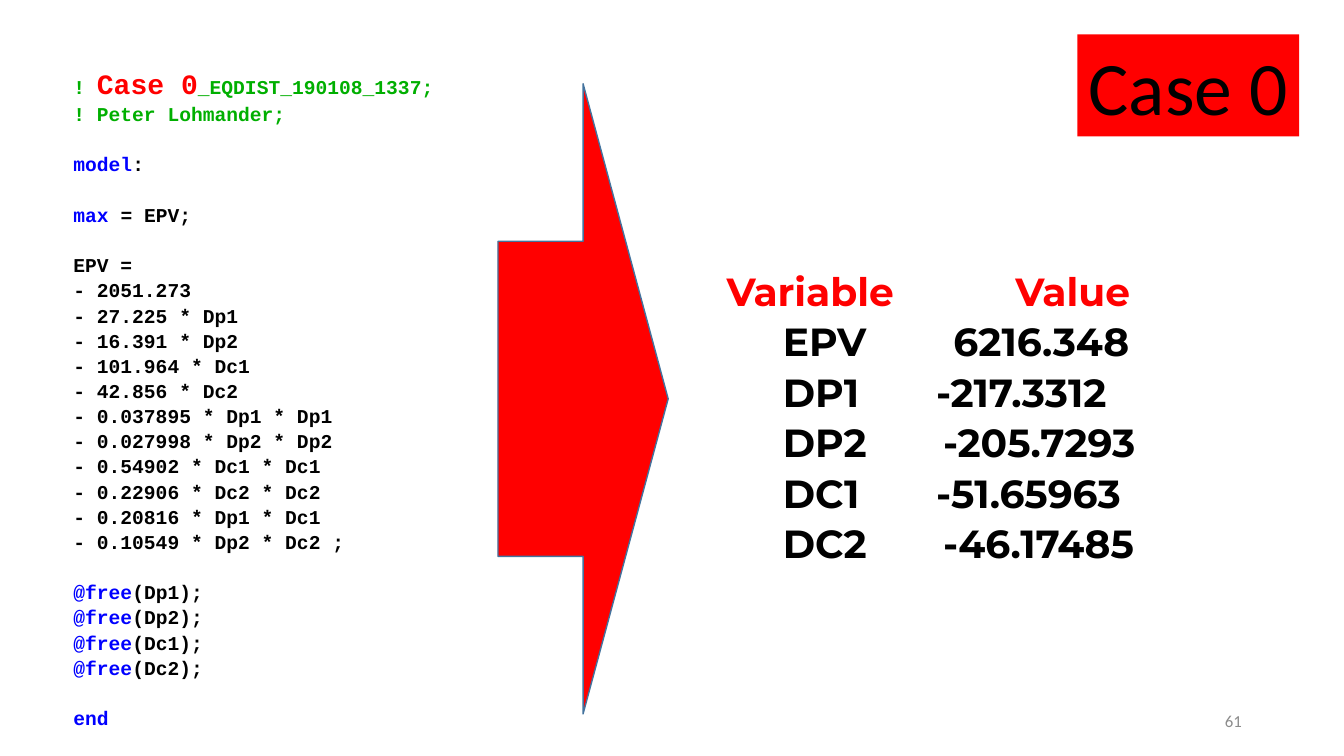
import pptx
import pptx.dml.color
import pptx.enum.shapes
import pptx.enum.text
import pptx.oxml.ns
import pptx.util
from lxml import etree

Cm = pptx.util.Cm
Pt = pptx.util.Pt
RGBColor = pptx.dml.color.RGBColor
Align = pptx.enum.text.PP_ALIGN
Shape = pptx.enum.shapes.MSO_SHAPE

BLACK = RGBColor(0, 0, 0)
RED = RGBColor(255, 0, 0)
GREEN = RGBColor(0, 0xAF, 0)
BLUE = RGBColor(0, 0, 255)
STEEL = RGBColor(0x43, 0x73, 0x9E)
GREY = RGBColor(0x8C, 0x8C, 0x8C)
LINE_SPACING = 1.07

CODE_BLOCKS = [
    [[("! ", GREEN), ("Case 0", RED), ("_EQDIST_190108_1337;", GREEN)],
     [("! Peter Lohmander;", GREEN)]],
    [[("model", BLUE), (":", BLACK)]],
    [[("max", BLUE), (" = EPV;", BLACK)]],
    [[(line, BLACK)] for line in (
        "EPV =", "- 2051.273", "- 27.225 * Dp1", "- 16.391 * Dp2",
        "- 101.964 * Dc1", "- 42.856 * Dc2", "- 0.037895 * Dp1 * Dp1",
        "- 0.027998 * Dp2 * Dp2", "- 0.54902 * Dc1 * Dc1",
        "- 0.22906 * Dc2 * Dc2", "- 0.20816 * Dp1 * Dc1",
        "- 0.10549 * Dp2 * Dc2 ;")],
    [[("@free", BLUE), (f"({name});", BLACK)]
     for name in ("Dp1", "Dp2", "Dc1", "Dc2")],
    [[("end", BLUE)]],
]

NAME_TAB = 1.42
RESULTS = [
    ("Variable", "Value", 7.28),
    ("\tEPV", "6216.348", 5.72),
    ("\tDP1", "-217.3312", 5.28),
    ("\tDP2", "-205.7293", 5.46),
    ("\tDC1", "-51.65963", 5.28),
    ("\tDC2", "-46.17485", 5.46),
]


def set_font(font, name, size, color=None, bold=False):
    """Apply a typeface, size, weight and optional colour."""
    font.name = name
    font.size = Pt(size)
    font.bold = bold
    if color is not None:
        font.color.rgb = color


def add_text_box(slide, left, top, width, height):
    """Add a wrapping text box and return its text frame."""
    box = slide.shapes.add_textbox(Cm(left), Cm(top), Cm(width), Cm(height))
    box.text_frame.word_wrap = True
    return box.text_frame


def next_paragraph(frame, index):
    """Return the first paragraph of a frame or append another."""
    return frame.add_paragraph() if index else frame.paragraphs[0]


def add_tab_stops(para, positions):
    """Give a paragraph left tab stops at distances in centimetres."""
    tabs = etree.SubElement(para._p.get_or_add_pPr(), pptx.oxml.ns.qn("a:tabLst"))
    for position in positions:
        etree.SubElement(tabs, pptx.oxml.ns.qn("a:tab"),
                         pos=str(Cm(position)), algn="l")


def add_code(slide, left, top, width, height):
    """Write the model code, with a gap before each block."""
    frame = add_text_box(slide, left, top, width, height)
    lines = [(line, index == 0) for block in CODE_BLOCKS
             for index, line in enumerate(block)]
    for index, (line, starts_block) in enumerate(lines):
        para = next_paragraph(frame, index)
        para.line_spacing = LINE_SPACING
        if starts_block and index:
            para.space_before = Pt(18)
        set_font(para.font, "Courier New", 14, bold=True)
        for text, color in line:
            span = para.add_run()
            span.text = text
            span.font.color.rgb = color
            if color == RED:
                span.font.size = Pt(20)


def add_results(slide, left, top, width, height):
    """Write the variables and their values on tab stops."""
    frame = add_text_box(slide, left, top, width, height)
    for index, (name, value, value_tab) in enumerate(RESULTS):
        para = next_paragraph(frame, index)
        add_tab_stops(para, (NAME_TAB, value_tab))
        para.line_spacing = LINE_SPACING
        para.add_run().text = f"{name}\t{value}"
        set_font(para.font, "Montserrat", 28, BLACK if index else RED, True)


def add_red_shape(slide, kind, left, top, width, height):
    """Add a flat red shape without an outline."""
    shape = slide.shapes.add_shape(kind, Cm(left), Cm(top), Cm(width), Cm(height))
    shape.shadow.inherit = False
    shape.fill.solid()
    shape.fill.fore_color.rgb = RED
    shape.line.fill.background()
    return shape


def add_arrow(slide, left, top, width, height):
    """Draw the outlined arrow from code to results."""
    arrow = add_red_shape(slide, Shape.RIGHT_ARROW, left, top, width, height)
    arrow.line.color.rgb = STEEL
    arrow.line.width = Pt(1)


def add_case_label(slide, left, top, width, height):
    """Draw the red case label."""
    label = add_red_shape(slide, Shape.RECTANGLE, left, top, width, height)
    label.text_frame.word_wrap = False
    label.text_frame.vertical_anchor = pptx.enum.text.MSO_ANCHOR.TOP
    para = label.text_frame.paragraphs[0]
    para.text = "Case 0"
    para.alignment = Align.CENTER
    set_font(para.font, "Calibri", 54, BLACK)


def add_page_number(slide, left, top, width, height):
    """Write the page number at the right of its box."""
    frame = add_text_box(slide, left, top, width, height)
    frame.vertical_anchor = pptx.enum.text.MSO_ANCHOR.MIDDLE
    para = frame.paragraphs[0]
    para.text = "61"
    para.alignment = Align.RIGHT
    set_font(para.font, "Calibri", 12, GREY)


def main():
    """Build and save the deck."""
    deck = pptx.Presentation()
    deck.slide_width = Cm(33.87)
    deck.slide_height = Cm(19.05)
    slide = deck.slides.add_slide(deck.slide_layouts[6])
    add_code(slide, 1.6, 1.5, 10.44, 17.2)
    add_results(slide, 18.06, 6.53, 15.32, 7.95)
    add_arrow(slide, 12.55, 2.11, 4.29, 15.88)
    add_case_label(slide, 27.15, 0.87, 5.59, 2.57)
    add_page_number(slide, 23.93, 17.65, 7.62, 1.02)
    deck.save("out.pptx")


if __name__ == "__main__":
    main()
